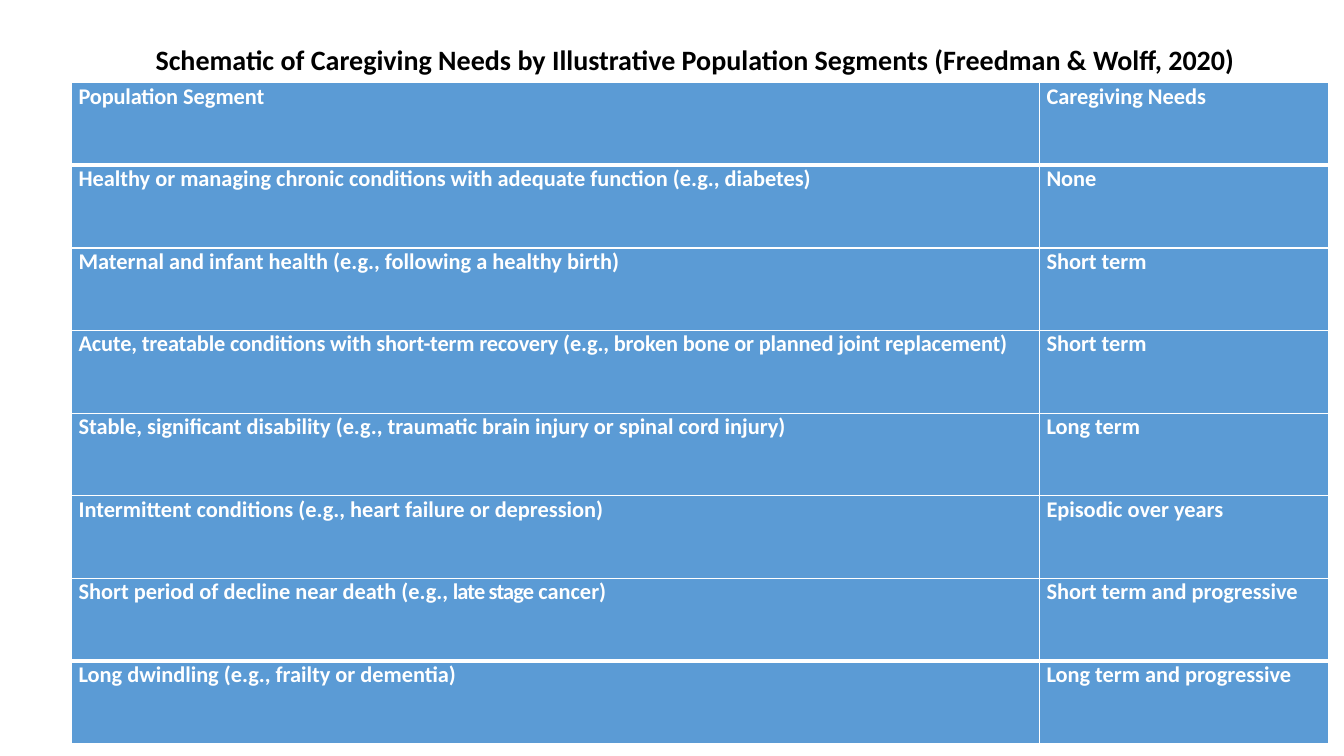
import pptx
import pptx.dml.color
import pptx.enum.text
import pptx.oxml.ns
import pptx.util
from lxml import etree

Inches = pptx.util.Inches
Pt = pptx.util.Pt

TITLE = ("Schematic of Caregiving Needs by Illustrative Population Segments "
         "(Freedman & Wolff, 2020)")
# A cell is a list of (text, letter spacing in points).
ROWS = [
    ([("Population ", -0.1), ("Segment", 0)], [("Caregiving Needs", 0)]),
    ([("Healthy or managing chronic conditions with adequate function "
       "(e.g., diabetes)", 0)], [("None", 0)]),
    ([("Maternal and infant health (e.g., following a healthy birth)", 0)],
     [("Short term", 0)]),
    ([("Acute, treatable conditions with short-term recovery "
       "(e.g., broken bone or planned joint replacement)", -0.1)],
     [("Short term", 0)]),
    ([("Stable, significant disability "
       "(e.g., traumatic brain injury or spinal cord injury)", 0)],
     [("Long term", 0)]),
    ([("Intermittent conditions (e.g., heart failure or depression)", 0)],
     [("Episodic over years", 0)]),
    ([("Short period of decline near death (e.g.,", 0),
      (" late stage ", -0.6), ("cancer)", 0)],
     [("Short term and progressive", 0)]),
    ([("Long dwindling (e.g., frailty or dementia)", 0)],
     [("Long term and progressive", 0)]),
]
WIDTHS = [9.6, 2.87]
HEIGHT = 0.82
LEFT, TOP = 0.71, 0.82
BLUE, WHITE, BLACK = "5B9BD5", "FFFFFF", "000000"


def rgb(code):
    return pptx.dml.color.RGBColor.from_string(code)


def write(frame, runs, size, color, before=0, align="LEFT"):
    para = frame.paragraphs[0]
    para.alignment = getattr(pptx.enum.text.PP_ALIGN, align)
    para.space_before = Pt(before)
    for text, gap in runs:
        run = para.add_run()
        run.text = text
        font = run.font
        font.name, font.size, font.bold = "Calibri", Pt(size), True
        font.color.rgb = rgb(color)
        if gap:
            run._r.get_or_add_rPr().set("spc", str(round(gap * 100)))


def edge(cell, top, base):
    """Draw white borders; top and base are widths in points."""
    props = cell._tc.get_or_add_tcPr()
    sides = [("lnL", 1), ("lnR", 1), ("lnT", top), ("lnB", base)]
    for spot, (side, width) in enumerate(sides):
        line = etree.Element(pptx.oxml.ns.qn("a:" + side), w=str(Pt(width)))
        fill = etree.SubElement(line, pptx.oxml.ns.qn("a:solidFill"))
        etree.SubElement(fill, pptx.oxml.ns.qn("a:srgbClr"), val=WHITE)
        props.insert(spot, line)


deck = pptx.Presentation()
deck.slide_width, deck.slide_height = Inches(13.33), Inches(7.5)
slide = deck.slides.add_slide(deck.slide_layouts[6])

last = len(ROWS) - 1
table = slide.shapes.add_table(
    len(ROWS), len(WIDTHS), Inches(LEFT), Inches(TOP),
    Inches(sum(WIDTHS)), Inches(HEIGHT * len(ROWS))).table
for col, width in zip(table.columns, WIDTHS):
    col.width = Inches(width)

for r, row in enumerate(ROWS):
    table.rows[r].height = Inches(HEIGHT)
    before = {0: 3.3, last: 1.9}.get(r, 2.1)
    top = 3 if r in (1, last) else 1
    base = 3 if r in (0, last - 1) else 1
    for c, runs in enumerate(row):
        cell = table.cell(r, c)
        cell.margin_left = Inches(0.07)
        cell.margin_right = cell.margin_top = cell.margin_bottom = 0
        cell.fill.solid()
        cell.fill.fore_color.rgb = rgb(BLUE)
        edge(cell, top, base)
        write(cell.text_frame, runs, 16, WHITE, before=before)

title = slide.shapes.add_textbox(
    Inches(0.6), Inches(0.37), Inches(12.59), Inches(0.44))
title.text_frame.word_wrap = True
title.text_frame.auto_size = pptx.enum.text.MSO_AUTO_SIZE.SHAPE_TO_FIT_TEXT
write(title.text_frame, [(TITLE, 0)], 20, BLACK, align="CENTER")

deck.save("out.pptx")
